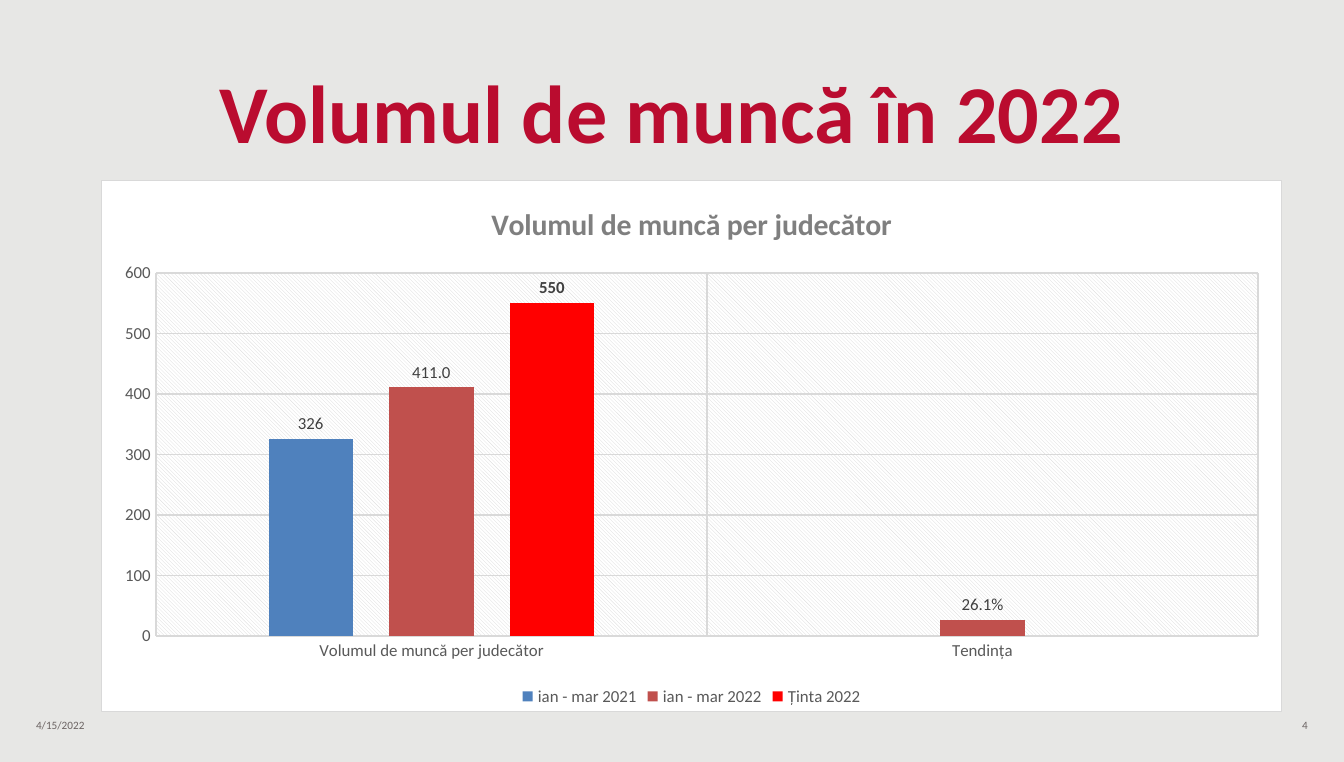
from lxml import etree
from pptx import Presentation
from pptx.chart.data import CategoryChartData
from pptx.dml.color import RGBColor
from pptx.enum.chart import XL_CHART_TYPE, XL_LABEL_POSITION, XL_LEGEND_POSITION, XL_TICK_MARK
from pptx.enum.text import MSO_ANCHOR, MSO_AUTO_SIZE, PP_ALIGN
from pptx.oxml import parse_xml
from pptx.util import Inches, Pt

COLUMNS = XL_CHART_TYPE.COLUMN_CLUSTERED
OUTSIDE = XL_LABEL_POSITION.OUTSIDE_END
BOTTOM_LEGEND = XL_LEGEND_POSITION.BOTTOM
NO_TICK = XL_TICK_MARK.NONE
LEFT, CENTER, RIGHT = PP_ALIGN.LEFT, PP_ALIGN.CENTER, PP_ALIGN.RIGHT
MIDDLE, BOTTOM = MSO_ANCHOR.MIDDLE, MSO_ANCHOR.BOTTOM
NO_FIT = MSO_AUTO_SIZE.NONE

FONT = "Calibri"
GRID, AXIS_TEXT, LABEL_TEXT = "D9D9D9", "595959", "404040"
CATEGORIES = ["Volumul de muncă per judecător", "Tendința"]
SERIES = [
    ("ian - mar 2021", [326, None], "4F81BD", "General", False),
    ("ian - mar 2022", [411, 26.1], "C0504D", "0.0", False),
    ("Ținta 2022", [550, None], "FF0000", "General", True),
]
NAMESPACES = (
    'xmlns:c="http://schemas.openxmlformats.org/drawingml/2006/chart" '
    'xmlns:a="http://schemas.openxmlformats.org/drawingml/2006/main"'
)


def rgb(color):
    """Turn a hex string into a colour."""
    return RGBColor.from_string(color)


def style_font(font, size, color, bold=False):
    """Set face, size, colour and weight of a font."""
    font.name = FONT
    font.size = Pt(size)
    font.bold = bold
    font.color.rgb = rgb(color)


def style_line(line, color):
    """Give a line its colour and the common width."""
    line.color.rgb = rgb(color)
    line.width = Pt(0.75)


def write_text(frame, text, size, color, align, anchor, bold=False):
    """Fill a text frame with one formatted paragraph."""
    frame.text = text
    frame.word_wrap = True
    frame.auto_size = NO_FIT
    frame.vertical_anchor = anchor
    paragraph = frame.paragraphs[0]
    paragraph.alignment = align
    paragraph.line_spacing = 0.9
    paragraph.space_before = Pt(0)
    paragraph.space_after = Pt(6)
    style_font(paragraph.runs[0].font, size, color, bold)


def place_title(slide, box):
    """Move the title placeholder into its box and fill it."""
    title = slide.shapes.title
    title.left, title.top, title.width, title.height = box
    write_text(title.text_frame, "Volumul de muncă în 2022", 44, "BA0C2F", CENTER, BOTTOM, True)


def place_footer(slide, box):
    """Put the date at the left and the page number at the right of the box."""
    left, top, width, height = box
    part_width = Inches(2.33)
    for text, align, offset in [("4/15/2022", LEFT, 0), ("4", RIGHT, width - part_width)]:
        part = slide.shapes.add_textbox(left + offset, top, part_width, height)
        write_text(part.text_frame, text, 6, "6C6463", align, MIDDLE)


def style_axes(chart):
    """Format both axes and their gridlines."""
    for axis in (chart.category_axis, chart.value_axis):
        axis.major_tick_mark = axis.minor_tick_mark = NO_TICK
        axis.has_major_gridlines = True
        style_line(axis.major_gridlines.format.line, GRID)
        style_font(axis.tick_labels.font, 9, AXIS_TEXT)
    style_line(chart.category_axis.format.line, GRID)
    chart.value_axis.format.line.fill.background()
    chart.value_axis.minimum_scale = 0
    chart.value_axis.maximum_scale = 600
    chart.value_axis.major_unit = 100


def style_series(plot):
    """Colour the columns and label them."""
    plot.gap_width = 267
    plot.overlap = -43
    plot.vary_by_categories = False
    for series, (_, _, color, number_format, bold) in zip(plot.series, SERIES):
        series.format.fill.solid()
        series.format.fill.fore_color.rgb = rgb(color)
        labels = series.data_labels
        labels.show_value = True
        labels.position = OUTSIDE
        labels.number_format = number_format
        labels.number_format_is_linked = False
        style_font(labels.font, 9, LABEL_TEXT, bold)
    trend_label = plot.series[1].points[1].data_label
    trend_label.text_frame.text = "26.1%"
    trend_label.position = OUTSIDE
    style_font(trend_label.text_frame.paragraphs[0].runs[0].font, 9, LABEL_TEXT)


def fill_backgrounds(chart):
    """Give the chart area a white fill and border, the plot area a hatch."""
    area = parse_xml(
        f'<c:spPr {NAMESPACES}><a:solidFill><a:srgbClr val="FFFFFF"/></a:solidFill>'
        f'<a:ln w="9525"><a:solidFill><a:srgbClr val="{GRID}"/></a:solidFill></a:ln></c:spPr>'
    )
    hatch = parse_xml(
        f'<c:spPr {NAMESPACES}><a:pattFill prst="ltDnDiag"><a:fgClr><a:srgbClr val="{GRID}"/></a:fgClr>'
        '<a:bgClr><a:srgbClr val="FFFFFF"/></a:bgClr></a:pattFill><a:ln><a:noFill/></a:ln></c:spPr>'
    )
    chart_part = next(
        child for child in chart.element if etree.QName(child).localname == "chart"
    )
    chart_part.addnext(area)
    chart_part.plotArea.append(hatch)


def place_chart(slide, box):
    """Add the workload column chart in its box."""
    data = CategoryChartData()
    data.categories = CATEGORIES
    for name, values, *_ in SERIES:
        data.add_series(name, values)
    chart = slide.shapes.add_chart(COLUMNS, *box, data).chart
    style_font(chart.font, 10, "000000")
    chart.has_title = True
    chart_title = chart.chart_title
    chart_title.include_in_layout = False
    chart_title.text_frame.text = "Volumul de muncă per judecător"
    style_font(chart_title.text_frame.paragraphs[0].runs[0].font, 16, "7F7F7F", True)
    chart.has_legend = True
    chart.legend.position = BOTTOM_LEGEND
    chart.legend.include_in_layout = False
    style_font(chart.legend.font, 9, AXIS_TEXT)
    style_axes(chart)
    style_series(chart.plots[0])
    fill_backgrounds(chart)


def main():
    """Build the slide and save it."""
    deck = Presentation()
    deck.slide_width, deck.slide_height = Inches(10), Inches(5.67)
    slide = deck.slides.add_slide(deck.slide_layouts[5])
    slide.background.fill.solid()
    slide.background.fill.fore_color.rgb = rgb("E7E7E5")
    place_footer(slide, (Inches(0.17), Inches(5.3), Inches(9.66), Inches(0.2)))
    place_title(slide, (Inches(0.75), Inches(0.74), Inches(8.5), Inches(0.51)))
    place_chart(slide, (Inches(0.75), Inches(1.34), Inches(8.79), Inches(3.96)))
    deck.save("out.pptx")


if __name__ == "__main__":
    main()
